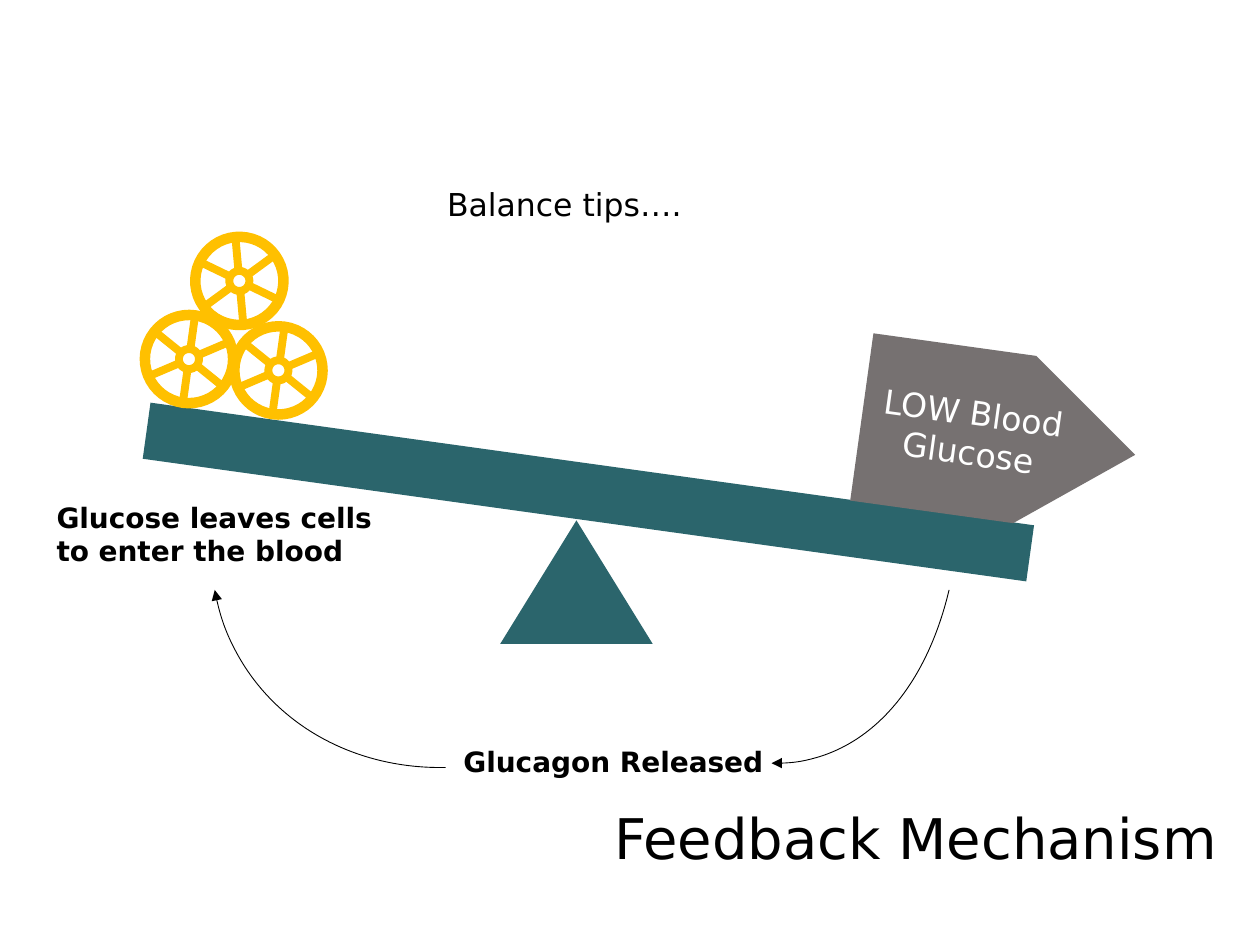
from math import cos, radians, sin

from lxml import etree
from pptx import Presentation
from pptx.dml.color import RGBColor
from pptx.enum.shapes import MSO_CONNECTOR, MSO_SHAPE
from pptx.enum.text import MSO_ANCHOR, MSO_AUTO_SIZE, PP_ALIGN
from pptx.oxml.ns import qn
from pptx.util import Inches, Pt

RECT, TRIANGLE = MSO_SHAPE.RECTANGLE, MSO_SHAPE.ISOSCELES_TRIANGLE
PLATE, OVAL, ARC = MSO_SHAPE.PENTAGON, MSO_SHAPE.OVAL, MSO_SHAPE.ARC
STRAIGHT = MSO_CONNECTOR.STRAIGHT
LEFT, CENTER, RIGHT = PP_ALIGN.LEFT, PP_ALIGN.CENTER, PP_ALIGN.RIGHT
MIDDLE, FIT_SHAPE = MSO_ANCHOR.MIDDLE, MSO_AUTO_SIZE.SHAPE_TO_FIT_TEXT

COLORS = {"teal": "2B656C", "gray": "767171", "gold": "FFC000",
          "white": "FFFFFF", "black": "000000"}
FONT = "DejaVu Sans"
COLS, ROWS = 100, 75
UNIT = Inches(10) / COLS
TILT = 7.9
SPOKES = (-31, 31, 90)


def rgb(name):
    """Return the named colour."""
    return RGBColor.from_string(COLORS[name])


def grid(*values):
    """Convert grid units to lengths."""
    return [round(v * UNIT) for v in values]


def within(box, x, y, w, h):
    """Return the lengths of a part placed relative to a box."""
    return grid(box[0] + x, box[1] + y, w, h)


def write(tf, text, size, color="black", bold=False, align=LEFT):
    """Put formatted text in a text frame."""
    tf.word_wrap = True
    p = tf.paragraphs[0]
    p.alignment = align
    r = p.add_run()
    r.text = text
    r.font.name, r.font.size, r.font.bold = FONT, Pt(size), bold
    r.font.color.rgb = rgb(color)


def add_label(s, box, at, text, size, **kwargs):
    """Add a text box that fits its text."""
    tf = s.shapes.add_textbox(*within(box, *at)).text_frame
    write(tf, text, size, **kwargs)
    tf.auto_size = FIT_SHAPE


def add_figure(shapes, kind, lengths, fill=None, line=None, width=1, rot=0):
    """Add a preset shape with plain fill and outline."""
    sp = shapes.add_shape(kind, *lengths)
    sp.shadow.inherit = False
    sp.rotation = rot
    if fill:
        sp.fill.solid()
        sp.fill.fore_color.rgb = rgb(fill)
    else:
        sp.fill.background()
    if line:
        sp.line.color.rgb = rgb(line)
        sp.line.width = Pt(width)
    else:
        sp.line.fill.background()
    return sp


def add_wheel(s, box, x, y, rot):
    """Add a spoked wheel centred at a point of the box."""
    shapes = s.shapes.add_group_shape().shapes
    cx, cy, radius, hub = box[0] + x, box[1] + y, 3.5, 0.8
    for spoke in SPOKES:
        angle = radians(spoke + rot)
        dx, dy = radius * cos(angle), radius * sin(angle)
        c = shapes.add_connector(
            STRAIGHT, *grid(cx - dx, cy - dy, cx + dx, cy + dy))
        c.line.color.rgb = rgb("gold")
        c.line.width = Pt(4.5)
        etree.SubElement(c._element.spPr, qn("a:effectLst"))
    for r, fill, width in ((radius, None, 6), (hub, "white", 4.5)):
        add_figure(shapes, OVAL, grid(cx - r, cy - r, 2 * r, 2 * r),
                   fill, "gold", width, rot)


def add_balance(s, box):
    """Draw the tipped beam with its pivot, weight and wheels."""
    add_figure(s.shapes, RECT, within(box, 0.3, 18.8, 70.8, 4.5),
               "teal", rot=TILT)
    add_figure(s.shapes, TRIANGLE, within(box, 28.7, 23.3, 12.1, 9.8), "teal")
    sp = add_figure(s.shapes, PLATE, within(box, 57.3, 9.9, 21.9, 13.4),
                    "gray", rot=TILT)
    sp.adjustments[0] = 0.66
    sp.text_frame.vertical_anchor = MIDDLE
    write(sp.text_frame, "LOW Blood Glucose", 19, "white", align=CENTER)
    for x, y, rot in ((11.1, 11.4, TILT), (4, 10.5, TILT), (8, 4.3, -5.2)):
        add_wheel(s, box, x, y, rot)


def add_arc(s, box, at, rot, start, end):
    """Add a curved arrow running between two angles in degrees."""
    sp = add_figure(s.shapes, ARC, within(box, *at),
                    line="black", width=0.5, rot=rot)
    for i, angle in enumerate((start, end)):
        sp.adjustments[i] = angle * 0.6
    etree.SubElement(sp.line._get_or_add_ln(), qn("a:tailEnd"),
                     type="triangle")


def add_loop(s, box):
    """Draw the hormone response and its curved arrows."""
    add_arc(s, box, (23.2, 0.4, 60.5, 37.3), 74, 325.89, 6.8)
    add_arc(s, box, (13.3, 11.7, 41, 36.7), 151.3, 303.07, 15.11)
    add_label(s, box, (32.8, 46.6, 26, 3.7), "Glucagon Released", 16,
              bold=True)
    add_label(s, box, (0.5, 27.2, 27.9, 6.4),
              "Glucose leaves cells to enter the blood", 16, bold=True)


def add_headings(s, box):
    """Add the title and the caption above the balance."""
    add_label(s, box, (41.1, 63.3, 56.5, 6.5), "Feedback Mechanism", 32,
              align=RIGHT)
    add_label(s, box, (34.5, 14.2, 21.5, 4), "Balance tips….", 18)


def main():
    """Build and save the slide."""
    prs = Presentation()
    prs.slide_width, prs.slide_height = grid(COLS, ROWS)
    s = prs.slides.add_slide(prs.slide_layouts[6])
    add_balance(s, (11, 18))
    add_loop(s, (3, 12))
    add_headings(s, (0, 0))
    prs.save("out.pptx")


if __name__ == "__main__":
    main()
